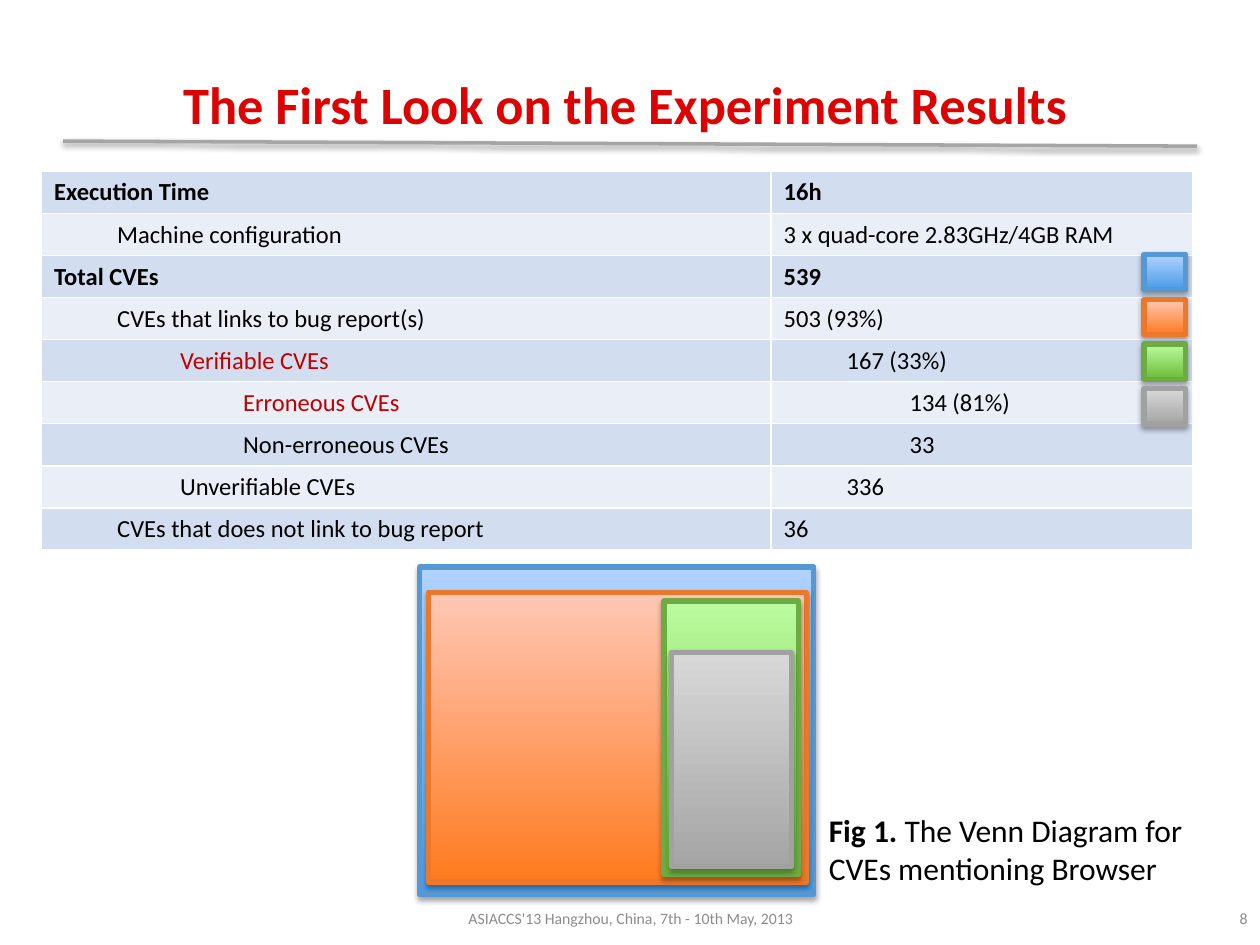
from lxml.etree import SubElement
from pptx import Presentation
from pptx.dml.color import RGBColor
from pptx.enum.shapes import MSO_CONNECTOR, MSO_SHAPE
from pptx.enum.text import MSO_ANCHOR, PP_ALIGN
from pptx.oxml.ns import qn
from pptx.util import Inches, Pt

THEME = {
    "font": "Calibri", "text": "000000", "title": "DC0403", "accent": "C00000",
    "muted": "8C8C8C", "rule": "A5A5A5", "border": "FFFFFF",
    "bands": ("D2DEEF", "EAEFF7"),
    "title_size": 30, "table_size": 14, "caption_size": 18, "footer_size": 9,
}
# Gradient bottom, gradient top, outline
SETS = {
    "total": ("499CE7", "B0D2FF", "5698D3"),
    "linked": ("FF7A1F", "FFC7B6", "EC792B"),
    "verifiable": ("6DBC38", "BBFCA0", "6DAC43"),
    "erroneous": ("A5A5A5", "D8D8D8", "A1A1A1"),
}
VENN = {
    "total": (3.33, 4.5, 3.13, 2.6),
    "linked": (3.4, 4.7, 3, 2.3),
    "verifiable": (5.27, 4.77, 1.07, 2.17),
    "erroneous": (5.33, 5.18, 0.95, 1.7),
}
# Label, label level, value, value level, emphasis
ROWS = [
    ("Execution Time", 0, "16h", 0, "bold"),
    ("Machine configuration", 1, "3 x quad-core 2.83GHz/4GB RAM", 0, None),
    ("Total CVEs", 0, "539", 0, "bold"),
    ("CVEs that links to bug report(s)", 1, "503 (93%)", 0, None),
    ("Verifiable CVEs", 2, "167 (33%)", 1, "accent"),
    ("Erroneous CVEs", 3, "134 (81%)", 2, "accent"),
    ("Non-erroneous CVEs", 3, "33", 2, None),
    ("Unverifiable CVEs", 2, "336", 1, None),
    ("CVEs that does not link to bug report", 1, "36", 0, None),
]
COLUMN_WIDTHS = (5.79, 3.35)
ROW_HEIGHT = 0.31
LEVEL_INDENT = 0.5
KEY_LEFT, KEY_TOP, KEY_STEP, KEY_SIZE = 9.08, 2.02, 0.355, (0.33, 0.28)


def color(name):
    return RGBColor.from_string(name)


def inches(values):
    return [Inches(value) for value in values]


def add_span(para, text, size, ink="text", bold=False):
    span = para.add_run()
    span.text = text
    span.font.name = THEME["font"]
    span.font.size = Pt(size)
    span.font.bold = bold
    span.font.color.rgb = color(THEME[ink])


def add_text(page, place, spans, size, ink="text", align=PP_ALIGN.LEFT, anchor=MSO_ANCHOR.TOP):
    """Add a one-paragraph box; spans are (text, bold) pairs."""
    frame = page.shapes.add_textbox(*inches(place)).text_frame
    frame.word_wrap = True
    frame.vertical_anchor = anchor
    para = frame.paragraphs[0]
    para.alignment = align
    for text, bold in spans:
        add_span(para, text, size, ink, bold)


def add_shadow(shape, distance, opacity):
    properties = shape._element.spPr
    effects = properties.find(qn("a:effectLst"))
    if effects is None:
        effects = SubElement(properties, qn("a:effectLst"))
    shadow = SubElement(effects, qn("a:outerShdw"), blurRad=str(Pt(3.1)),
                        dist=str(Pt(distance)), dir="5400000", rotWithShape="0")
    black = SubElement(shadow, qn("a:srgbClr"), val="000000")
    SubElement(black, qn("a:alpha"), val=str(opacity * 1000))


def add_set(page, name, place):
    bottom, top, outline = SETS[name]
    box = page.shapes.add_shape(MSO_SHAPE.RECTANGLE, *inches(place))
    box.fill.gradient()
    box.fill.gradient_angle = 90
    for stop, shade, position in zip(box.fill.gradient_stops, (bottom, top), (0, 1)):
        stop.color.rgb = color(shade)
        stop.position = position
    box.line.color.rgb = color(outline)
    box.line.width = Pt(3)
    box.shadow.inherit = False
    add_shadow(box, 1.8, 35)


def add_borders(cell):
    properties = cell._tc.get_or_add_tcPr()
    for side in ("lnL", "lnR", "lnT", "lnB"):
        line = SubElement(properties, qn(f"a:{side}"), w=str(Pt(1)))
        fill = SubElement(line, qn("a:solidFill"))
        SubElement(fill, qn("a:srgbClr"), val=THEME["border"])


def fill_cell(cell, text, level, band, ink, bold):
    add_borders(cell)
    cell.fill.solid()
    cell.fill.fore_color.rgb = color(band)
    para = cell.text_frame.paragraphs[0]
    para.level = level
    indent = para._p.get_or_add_pPr()
    indent.set("marL", str(Inches(level * LEVEL_INDENT)))
    indent.set("indent", "0")
    add_span(para, text, THEME["table_size"], ink, bold)


def add_results(page):
    place = inches((0.33, 1.36, sum(COLUMN_WIDTHS), ROW_HEIGHT * len(ROWS)))
    table = page.shapes.add_table(len(ROWS), len(COLUMN_WIDTHS), *place).table
    table.first_row = False
    table.horz_banding = False
    for column, width in zip(table.columns, COLUMN_WIDTHS):
        column.width = Inches(width)
    for index, (label, label_level, value, value_level, emphasis) in enumerate(ROWS):
        table.rows[index].height = Inches(ROW_HEIGHT)
        band = THEME["bands"][index % 2]
        bold = emphasis == "bold"
        ink = "accent" if emphasis == "accent" else "text"
        fill_cell(table.cell(index, 0), label, label_level, band, ink, bold)
        fill_cell(table.cell(index, 1), value, value_level, band, "text", bold)


def add_rule(page):
    rule = page.shapes.add_connector(MSO_CONNECTOR.STRAIGHT, *inches((9.5, 1.16, 0.5, 1.12)))
    rule.line.color.rgb = color(THEME["rule"])
    rule.line.width = Pt(2)
    add_shadow(rule, 1.6, 38)


def main():
    deck = Presentation()
    deck.slide_width, deck.slide_height = inches((10, 7.5))
    page = deck.slides.add_slide(deck.slide_layouts[6])

    add_rule(page)
    add_text(page, (1.1, 0.4, 7.73, 0.84), [("The First Look on the Experiment Results", True)],
             THEME["title_size"], "title", PP_ALIGN.CENTER, MSO_ANCHOR.MIDDLE)
    add_results(page)
    add_text(page, (3.42, 7.09, 3.17, 0.4),
             [("ASIACCS'13 Hangzhou, China, 7th - 10th May, 2013", False)],
             THEME["footer_size"], "muted", PP_ALIGN.CENTER, MSO_ANCHOR.MIDDLE)
    add_text(page, (7.67, 7.09, 2.33, 0.4), [("8", False)],
             THEME["footer_size"], "muted", PP_ALIGN.RIGHT, MSO_ANCHOR.MIDDLE)
    for name, place in VENN.items():
        add_set(page, name, place)
    for index, name in enumerate(SETS):
        add_set(page, name, (KEY_LEFT, KEY_TOP + index * KEY_STEP, *KEY_SIZE))
    add_text(page, (6.48, 6.39, 3.46, 0.71),
             [("Fig 1. ", True), ("The Venn Diagram for CVEs mentioning Browser", False)],
             THEME["caption_size"])
    deck.save("out.pptx")


if __name__ == "__main__":
    main()
